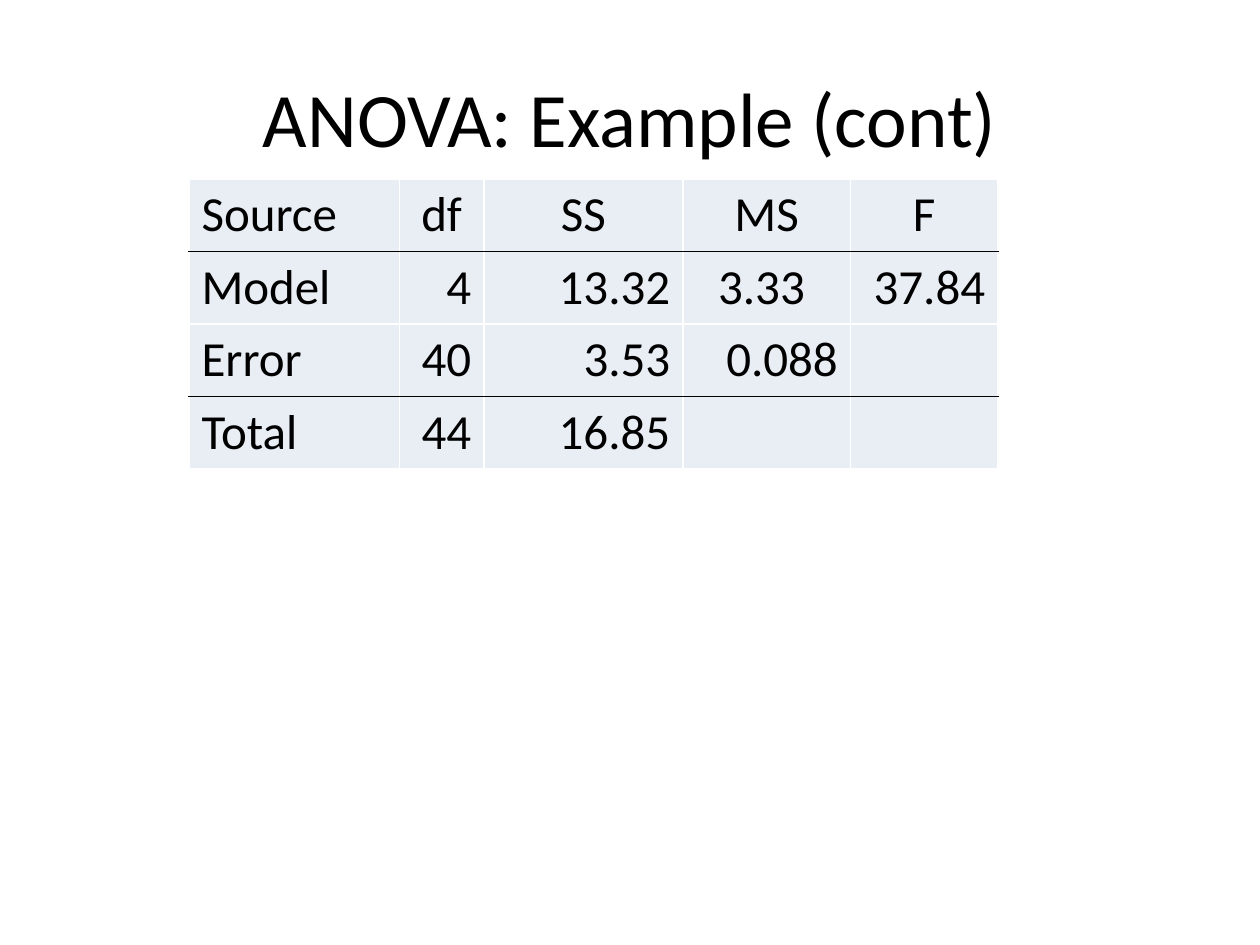
from dataclasses import dataclass

from lxml import etree
from pptx import Presentation
from pptx.dml.color import RGBColor
from pptx.enum.text import MSO_ANCHOR, PP_ALIGN
from pptx.oxml.ns import qn
from pptx.util import Inches, Pt

LEFT, CENTER, RIGHT = PP_ALIGN.LEFT, PP_ALIGN.CENTER, PP_ALIGN.RIGHT
MIDDLE = MSO_ANCHOR.MIDDLE
TITLE_ONLY = 5


@dataclass(frozen=True)
class Theme:
    font: str = "Calibri"
    title_size: int = 44
    table_size: int = 28
    text: str = "000000"
    cell: str = "E9EDF4"
    grid: str = "FFFFFF"
    rule: str = "000000"


THEME = Theme()
ANOVA_ROWS = [
    ["Source", "df", "SS", "MS", "F"],
    ["Model", "4", "13.32", "3.33", "37.84"],
    ["Error", "40", "3.53", "0.088", ""],
    ["Total", "44", "16.85", "", ""],
]
COLUMN_WIDTHS = [1.67, 0.67, 1.58, 1.33, 1.17]
ROW_HEIGHT = 0.57
RULED_ROWS = {0, 2}  # rows with a dark rule below
MODEL_MS = (1, 3)  # the one number that is indented from the left


def style_paragraph(para, size, align):
    para.alignment = align
    para.font.name = THEME.font
    para.font.size = Pt(size)
    para.font.color.rgb = RGBColor.from_string(THEME.text)


def add_title(page, text):
    title = page.shapes.title
    title.left, title.top = Inches(0.5), Inches(0.3)
    title.width, title.height = Inches(9), Inches(1.25)
    title.text_frame.text = text
    title.text_frame.vertical_anchor = MIDDLE
    style_paragraph(title.text_frame.paragraphs[0], THEME.title_size, CENTER)


def set_borders(cell, top, bottom):
    """Draw 1 pt borders; the sides always take the grid colour."""
    properties = cell._tc.get_or_add_tcPr()
    sides = [("L", THEME.grid), ("R", THEME.grid), ("T", top), ("B", bottom)]
    for index, (side, color) in enumerate(sides):
        line = etree.Element(qn(f"a:ln{side}"), w=str(Pt(1)))
        fill = etree.SubElement(line, qn("a:solidFill"))
        etree.SubElement(fill, qn("a:srgbClr"), val=color)
        properties.insert(index, line)


def rule_color(row):
    return THEME.rule if row in RULED_ROWS else THEME.grid


def cell_alignment(row, column):
    if column == 0 or (row, column) == MODEL_MS:
        return LEFT
    return CENTER if row == 0 else RIGHT


def fill_cell(cell, text, row, column):
    cell.text = text
    style_paragraph(cell.text_frame.paragraphs[0], THEME.table_size,
                    cell_alignment(row, column))
    if (row, column) == MODEL_MS:
        cell.margin_left = Inches(0.28)
    cell.fill.solid()
    cell.fill.fore_color.rgb = RGBColor.from_string(THEME.cell)
    set_borders(cell, rule_color(row - 1), rule_color(row))


def add_anova_table(page):
    frame = page.shapes.add_table(
        len(ANOVA_ROWS), len(COLUMN_WIDTHS), Inches(1.5), Inches(1.42),
        Inches(sum(COLUMN_WIDTHS)), Inches(ROW_HEIGHT * len(ANOVA_ROWS)))
    table = frame.table
    table.first_row = table.horz_banding = False
    for column, width in zip(table.columns, COLUMN_WIDTHS):
        column.width = Inches(width)
    for row, texts in enumerate(ANOVA_ROWS):
        table.rows[row].height = Inches(ROW_HEIGHT)
        for column, text in enumerate(texts):
            fill_cell(table.cell(row, column), text, row, column)


def main():
    deck = Presentation()
    deck.slide_width, deck.slide_height = Inches(10), Inches(7.5)
    page = deck.slides.add_slide(deck.slide_layouts[TITLE_ONLY])
    add_title(page, "ANOVA: Example (cont)")
    add_anova_table(page)
    deck.save("out.pptx")


if __name__ == "__main__":
    main()
